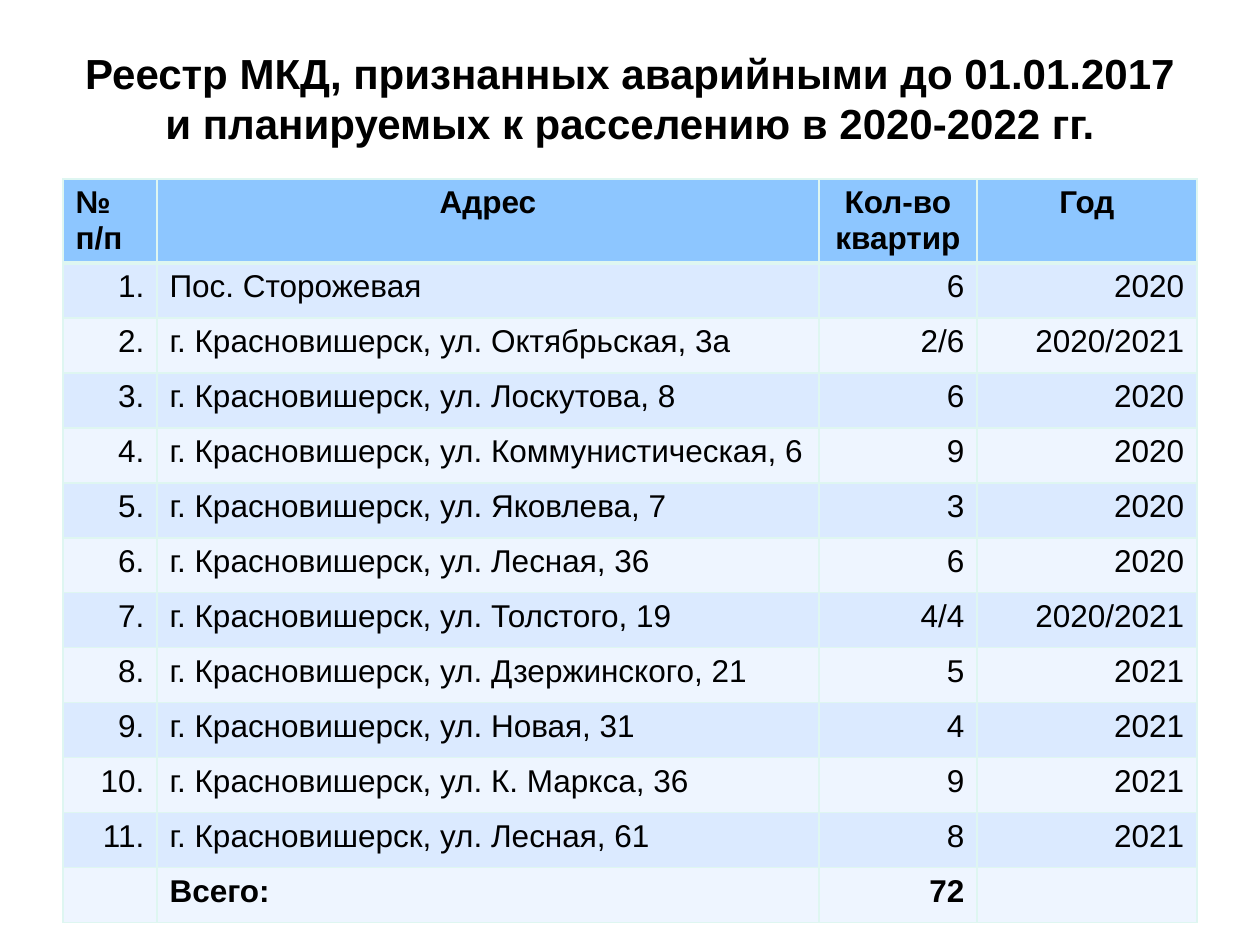
import pptx
import pptx.dml.color
import pptx.enum.text
import pptx.oxml.ns
import pptx.util
from lxml import etree

PX = 914400 // 126
ALIGN = pptx.enum.text.PP_ALIGN
FONT = "Arial"
TEXT, HEADER, ODD, EVEN, BORDER = "000000", "8DC6FF", "DBEAFF", "EEF5FF", "DEF6F1"

TITLE = "Реестр МКД, признанных аварийными до 01.01.2017 и планируемых к расселению в 2020-2022 гг."
HEADINGS = ("№ п/п", "Адрес", "Кол-во квартир", "Год")
TOWN = "г. Красновишерск, ул. "
HOUSES = [
    ("Пос. Сторожевая", "6", "2020"),
    (TOWN + "Октябрьская, 3а", "2/6", "2020/2021"),
    (TOWN + "Лоскутова, 8", "6", "2020"),
    (TOWN + "Коммунистическая, 6", "9", "2020"),
    (TOWN + "Яковлева, 7", "3", "2020"),
    (TOWN + "Лесная, 36", "6", "2020"),
    (TOWN + "Толстого, 19", "4/4", "2020/2021"),
    (TOWN + "Дзержинского, 21", "5", "2021"),
    (TOWN + "Новая, 31", "4", "2021"),
    (TOWN + "К. Маркса, 36", "9", "2021"),
    (TOWN + "Лесная, 61", "8", "2021"),
]
TOTAL = ("", "Всего:", "72", "")
COLUMN_WIDTHS = (94, 662, 158, 220)
HEADER_ALIGN = (ALIGN.LEFT, ALIGN.CENTER, ALIGN.CENTER, ALIGN.CENTER)
BODY_ALIGN = (ALIGN.RIGHT, ALIGN.LEFT, ALIGN.RIGHT, ALIGN.RIGHT)
HEADER_HEIGHT, ROW_HEIGHT = 84, 55


def color(value):
    return pptx.dml.color.RGBColor.from_string(value)


def write(frame, text, size, bold, align):
    para = frame.paragraphs[0]
    para.alignment = align
    if text:
        para.add_run().text = text
    formats = {"name": FONT, "size": pptx.util.Pt(size), "bold": bold}
    for font in [para.font] + [span.font for span in para.runs]:
        for name, value in formats.items():
            setattr(font, name, value)
        font.color.rgb = color(TEXT)


def add_borders(cell, widths):
    """Draw the left, right, top and bottom borders, with widths in points."""
    properties = cell._tc.get_or_add_tcPr()
    for side, width in zip("LRTB", widths):
        line = etree.SubElement(properties, pptx.oxml.ns.qn("a:ln" + side),
                                w=str(pptx.util.Pt(width)))
        fill = etree.SubElement(line, pptx.oxml.ns.qn("a:solidFill"))
        etree.SubElement(fill, pptx.oxml.ns.qn("a:srgbClr"), val=BORDER)


def place_title(page, left, top, width, height):
    title = page.shapes.title
    box = {"left": left, "top": top, "width": width, "height": height}
    for name, value in box.items():
        setattr(title, name, value * PX)
    frame = title.text_frame
    frame.word_wrap = True
    frame.vertical_anchor = pptx.enum.text.MSO_ANCHOR.MIDDLE
    write(frame, TITLE, 24, True, ALIGN.CENTER)


def add_register(page, left, top):
    numbered = [(f"{number}.", *house) for number, house in enumerate(HOUSES, 1)]
    rows = [HEADINGS, *numbered, TOTAL]
    heights = [HEADER_HEIGHT] + [ROW_HEIGHT] * (len(rows) - 1)
    table = page.shapes.add_table(
        len(rows), len(COLUMN_WIDTHS), left * PX, top * PX,
        sum(COLUMN_WIDTHS) * PX, sum(heights) * PX).table
    for column, width in zip(table.columns, COLUMN_WIDTHS):
        column.width = width * PX
    for index, (values, height) in enumerate(zip(rows, heights)):
        table.rows[index].height = height * PX
        is_header = index == 0
        fill = HEADER if is_header else ODD if index % 2 else EVEN
        aligns = HEADER_ALIGN if is_header else BODY_ALIGN
        widths = (1, 1, 3 if index == 1 else 1, 3 if is_header else 1)
        bold = is_header or values is TOTAL
        for cell, value, align in zip(table.rows[index].cells, values, aligns):
            add_borders(cell, widths)
            cell.fill.solid()
            cell.fill.fore_color.rgb = color(fill)
            write(cell.text_frame, value, 18, bold, align)


def main():
    deck = pptx.Presentation()
    deck.slide_width, deck.slide_height = 1260 * PX, 945 * PX
    page = deck.slides.add_slide(deck.slide_layouts[5])
    place_title(page, 63, 38, 1134, 120)
    add_register(page, 63, 179)
    deck.save("out.pptx")


if __name__ == "__main__":
    main()
